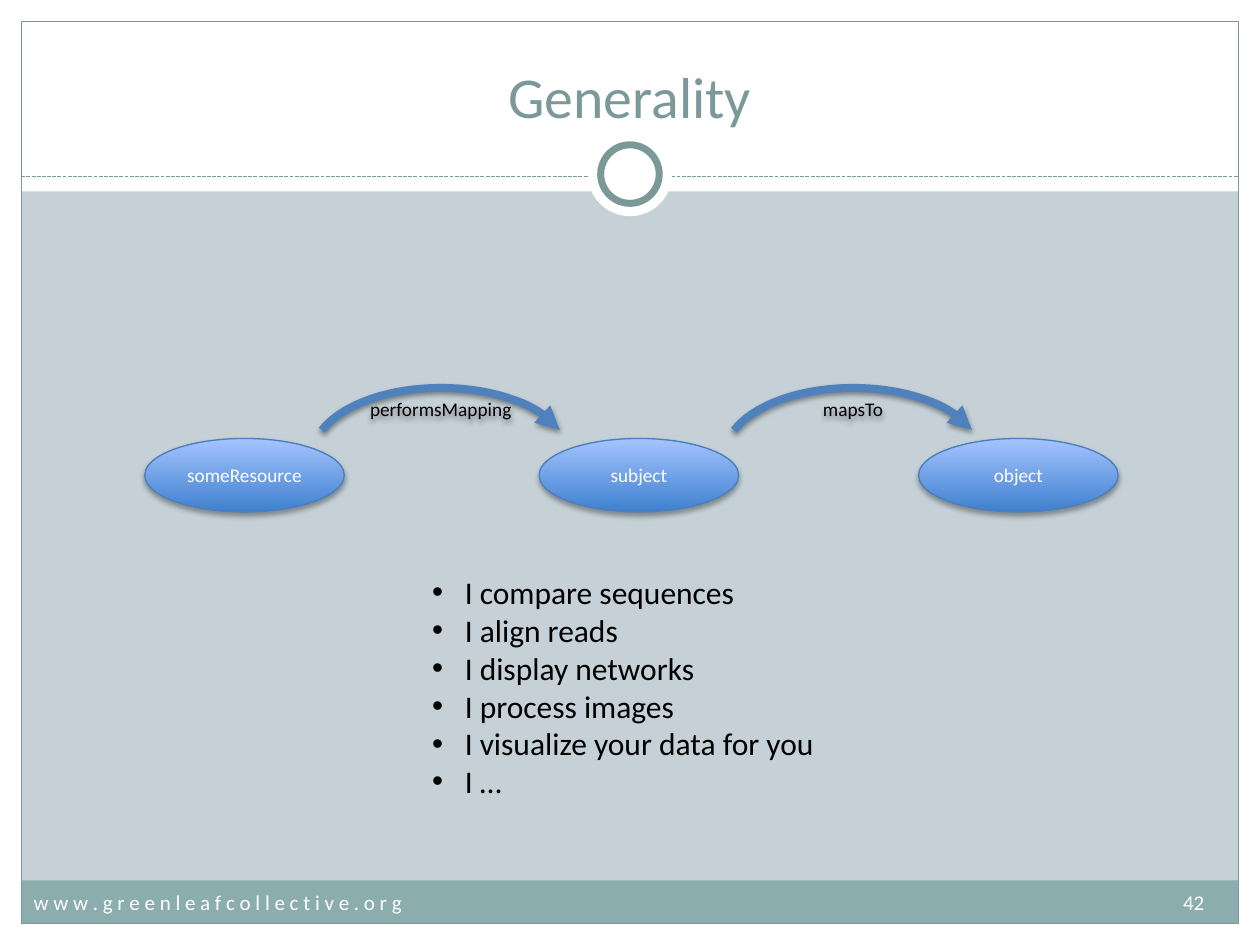
import pptx
import pptx.util
import pptx.dml.color
import pptx.enum.dml
import pptx.enum.shapes
import pptx.enum.text
import pptx.oxml
import pptx.oxml.ns

Cm, Pt = pptx.util.Cm, pptx.util.Pt
SHAPE = pptx.enum.shapes.MSO_SHAPE
ALIGN = pptx.enum.text.PP_ALIGN
ANCHOR = pptx.enum.text.MSO_ANCHOR
DASH = pptx.enum.dml.MSO_LINE

COLORS = {
    "background": "C5D1D7", "white": "FFFFFF", "black": "000000",
    "accent": "7C999A", "footer": "8CADAE",
    "node_dark": "3F80CE", "node_light": "A4C4FF", "node_line": "4B7EBC",
    "arrow": "4F81BD",
}


def rgb(name):
    return pptx.dml.color.RGBColor.from_string(COLORS[name])


def add_xml(parent, tag, children="", **attributes):
    """Append one DrawingML element, with optional inner XML."""
    values = " ".join(f'{key}="{value}"' for key, value in attributes.items())
    namespace = pptx.oxml.ns.nsdecls("a")
    element = pptx.oxml.parse_xml(f"<a:{tag} {namespace} {values}>{children}</a:{tag}>")
    parent.append(element)
    return element


class SlideBuilder:
    font = "Calibri"

    def __init__(self, slide):
        self.slide = slide
        slide.background.fill.solid()
        slide.background.fill.fore_color.rgb = rgb("background")

    def shape(self, kind, left, top, width, height, fill=None, line=None, weight=0.75):
        shape = self.slide.shapes.add_shape(kind, Cm(left), Cm(top), Cm(width), Cm(height))
        shape.shadow.inherit = False
        if fill:
            shape.fill.solid()
            shape.fill.fore_color.rgb = rgb(fill)
        else:
            shape.fill.background()
        if line:
            shape.line.color.rgb = rgb(line)
            shape.line.width = Pt(weight)
        else:
            shape.line.fill.background()
        return shape

    def circle(self, center_x, center_y, diameter, **style):
        radius = diameter / 2
        return self.shape(SHAPE.OVAL, center_x - radius, center_y - radius,
                          diameter, diameter, **style)

    def rule(self, left, right, y, color):
        rule = self.slide.shapes.add_connector(
            pptx.enum.shapes.MSO_CONNECTOR.STRAIGHT, Cm(left), Cm(y), Cm(right), Cm(y))
        rule.line.color.rgb = rgb(color)
        rule.line.width = Pt(0.75)
        rule.line.dash_style = DASH.SQUARE_DOT
        add_xml(rule._element.spPr, "effectLst")

    def label(self, shape, lines, size, color, align=ALIGN.LEFT, anchor=ANCHOR.TOP):
        frame = shape.text_frame
        frame.word_wrap = True
        frame.vertical_anchor = anchor
        frame.text = "\n".join(lines)
        for paragraph in frame.paragraphs:
            paragraph.alignment = align
            for run in paragraph.runs:
                run.font.name = self.font
                run.font.size = Pt(size)
                run.font.color.rgb = rgb(color)
        return frame

    def text(self, left, top, width, height, lines, size, color, **layout):
        box = self.slide.shapes.add_textbox(Cm(left), Cm(top), Cm(width), Cm(height))
        return self.label(box, lines, size, color, **layout)

    def bullets(self, left, top, width, height, lines, size, color):
        frame = self.text(left, top, width, height, lines, size, color)
        indent = Cm(0.66)
        for paragraph in frame.paragraphs:
            properties = paragraph._p.get_or_add_pPr()
            properties.set("marL", str(indent))
            properties.set("indent", str(-indent))
            add_xml(properties, "buFont", typeface="Arial")
            add_xml(properties, "buChar", char="•")

    def drop_shadow(self, shape, opacity, distance):
        effects = shape._element.spPr.find(pptx.oxml.ns.qn("a:effectLst"))
        color = f'<a:srgbClr val="{COLORS["black"]}"><a:alpha val="{opacity * 1000}"/></a:srgbClr>'
        add_xml(effects, "outerShdw", color, blurRad=Pt(3.1), dist=Pt(distance),
                dir=90 * 60000, rotWithShape=0)

    def node(self, left, name):
        node = self.shape(SHAPE.OVAL, left, 8.84, 4.02, 1.48, line="node_line")
        node.fill.gradient()
        node.fill.gradient_angle = 90
        for stop, color in zip(node.fill.gradient_stops, ("node_dark", "node_light")):
            stop.color.rgb = rgb(color)
        self.drop_shadow(node, 35, 1.8)
        self.label(node, [name], 11, "white", ALIGN.CENTER, ANCHOR.MIDDLE)

    def arc_arrow(self, left, relation):
        arc = self.shape(SHAPE.ARC, left, 7.82, 5.18, 2.74, line="arrow", weight=4.5)
        arc.adjustments[0] = 115.28
        arc.adjustments[1] = 208.63
        add_xml(arc.line._get_or_add_ln(), "tailEnd", type="triangle")
        self.drop_shadow(arc, 38, 1.6)
        self.label(arc, [relation], 11, "black", ALIGN.CENTER, ANCHOR.MIDDLE)


def main():
    width, height, margin = 25.4, 19.05, 0.43
    inner_width, inner_height = width - 2 * margin, height - 2 * margin
    presentation = pptx.Presentation()
    presentation.slide_width, presentation.slide_height = Cm(width), Cm(height)
    page = SlideBuilder(presentation.slides.add_slide(presentation.slide_layouts[6]))

    # White header and margins
    for band in ((0, height - margin, width, margin), (0, 0, width, 3.86),
                 (0, 0, margin, height), (width - margin, 0, margin, height)):
        page.shape(SHAPE.RECTANGLE, *band, fill="white")

    # Footer band, frame and header rule
    page.shape(SHAPE.RECTANGLE, margin, 17.75, inner_width, 0.87, fill="footer")
    page.shape(SHAPE.RECTANGLE, margin, margin, inner_width, inner_height, line="accent")
    page.rule(margin, width - margin, 3.56, "accent")

    # Ring on the header rule
    page.circle(width / 2, 3.51, 1.7, fill="white")
    page.circle(width / 2, 3.51, 1.18, fill="white", line="accent", weight=4)

    # Title
    page.text(0.85, 0.64, 23.7, 2.1, ["Generality"], 33, "accent",
              align=ALIGN.CENTER, anchor=ANCHOR.BOTTOM)

    # Footer address and page number, parted by a right tab
    footer = page.text(margin, 17.81, inner_width, 1.02,
                       ["w w w . g r e e n l e a f c o l l e c t i v e . o r g\t42"], 12, "white")
    tabs = add_xml(footer.paragraphs[0]._p.get_or_add_pPr(), "tabLst")
    add_xml(tabs, "tab", pos=Cm(23.6), algn="r")

    # Mapping diagram
    for left, name in ((2.92, "someResource"), (10.87, "subject"), (18.52, "object")):
        page.node(left, name)
    for left, relation in ((6.3, "performsMapping"), (14.61, "mapsTo")):
        page.arc_arrow(left, relation)

    # Examples of services
    page.bullets(8.46, 11.43, 10.06, 4.88, [
        "I compare sequences",
        "I align reads",
        "I display networks",
        "I process images",
        "I visualize your data for you",
        "I …",
    ], 18, "black")

    presentation.save("out.pptx")


if __name__ == "__main__":
    main()
